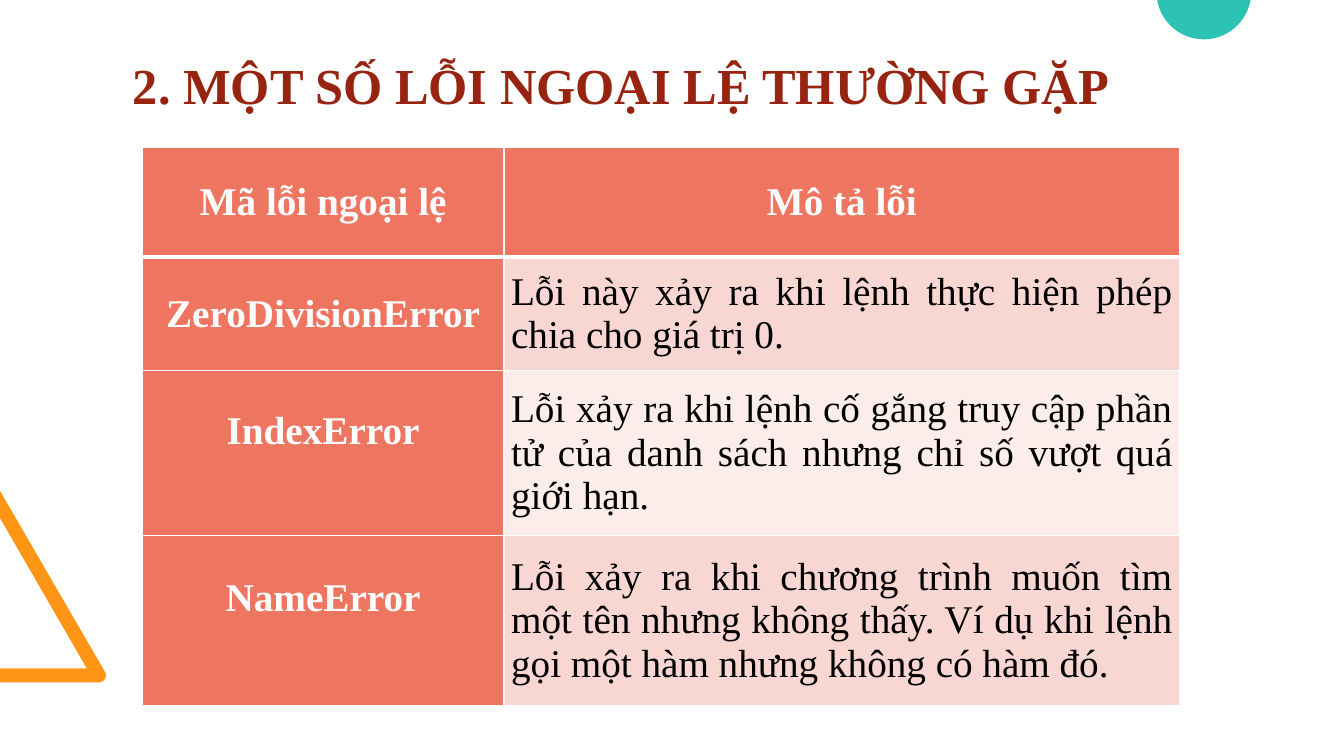
from math import cos, radians, sin

from lxml import etree
from pptx import Presentation
from pptx.dml.color import RGBColor
from pptx.enum.text import MSO_ANCHOR, MSO_AUTO_SIZE, PP_ALIGN
from pptx.oxml.ns import qn
from pptx.util import Inches, Pt

CENTER = PP_ALIGN.CENTER
JUSTIFY = PP_ALIGN.JUSTIFY
MIDDLE = MSO_ANCHOR.MIDDLE
FIT_SHAPE = MSO_AUTO_SIZE.SHAPE_TO_FIT_TEXT

WHITE = RGBColor(0xFF, 0xFF, 0xFF)
BLACK = RGBColor(0x00, 0x00, 0x00)
MAROON = RGBColor(0x97, 0x24, 0x10)
CORAL = RGBColor(0xEE, 0x76, 0x61)
PINK = RGBColor(0xF8, 0xD6, 0xD2)
PALE_PINK = RGBColor(0xFC, 0xEC, 0xEA)
ORANGE = RGBColor(0xFF, 0x95, 0x14)
TEAL = RGBColor(0x2C, 0xC3, 0xB4)

HEADER = ("Mã lỗi ngoại lệ", "Mô tả lỗi")
ERRORS = [
    ("ZeroDivisionError", "Lỗi này xảy ra khi lệnh thực hiện phép chia cho giá trị 0."),
    ("IndexError", "Lỗi xảy ra khi lệnh cố gắng truy cập phần tử của danh sách "
                   "nhưng chỉ số vượt quá giới hạn."),
    ("NameError", "Lỗi xảy ra khi chương trình muốn tìm một tên nhưng không thấy. "
                  "Ví dụ khi lệnh gọi một hàm nhưng không có hàm đó."),
]
COLUMN_WIDTHS = (3.59, 6.7)
ROW_HEIGHTS = (1.09, 1.13, 1.63, 1.69)
RAISED_ROWS = (2, 3)
LINE_HEIGHT = 0.43


def arc(center_x, center_y, radius, start, end, steps=40):
    """Return points along an arc, with angles in degrees clockwise."""
    angles = [radians(start + (end - start) * step / steps) for step in range(steps + 1)]
    return [(center_x + radius * cos(a), center_y + radius * sin(a)) for a in angles]


class SlideBuilder:
    """Draws styled elements on one slide."""

    font = "Times New Roman"

    def __init__(self, slide):
        self.slide = slide

    def outline(self, points, color):
        corners = [(Inches(x), Inches(y)) for x, y in points]
        builder = self.slide.shapes.build_freeform(*corners[0])
        builder.add_line_segments(corners[1:], close=True)
        shape = builder.convert_to_shape()
        shape.shadow.inherit = False
        shape.fill.solid()
        shape.fill.fore_color.rgb = color
        shape.line.fill.background()

    def add_text(self, text_frame, text, size, color, bold, alignment):
        paragraph = text_frame.paragraphs[0]
        paragraph.alignment = alignment
        run = paragraph.add_run()
        run.text = text
        run.font.name = self.font
        run.font.size = Pt(size)
        run.font.bold = bold
        run.font.color.rgb = color

    def title(self, text, left, top, width, height):
        box = self.slide.shapes.add_textbox(
            Inches(left), Inches(top), Inches(width), Inches(height))
        box.text_frame.word_wrap = False
        box.text_frame.auto_size = FIT_SHAPE
        self.add_text(box.text_frame, text, 36, MAROON, True, JUSTIFY)

    def borders(self, cell, top, bottom):
        properties = cell._tc.get_or_add_tcPr()
        widths = {"a:lnL": 1, "a:lnR": 1, "a:lnT": top, "a:lnB": bottom}
        for index, (tag, width) in enumerate(widths.items()):
            line = etree.Element(qn(tag), w=str(Pt(width)))
            fill = etree.SubElement(line, qn("a:solidFill"))
            etree.SubElement(fill, qn("a:srgbClr"), val=str(WHITE))
            properties.insert(index, line)

    def cell(self, cell, text, row, column):
        strong = row == 0 or column == 0
        cell.vertical_anchor = MIDDLE
        cell.margin_left = cell.margin_right = Inches(0.07)
        cell.margin_top = 0
        raised = column == 0 and row in RAISED_ROWS
        cell.margin_bottom = Inches(LINE_HEIGHT if raised else 0)
        cell.fill.solid()
        cell.fill.fore_color.rgb = CORAL if strong else PINK if row % 2 else PALE_PINK
        self.add_text(cell.text_frame, text, 28, WHITE if strong else BLACK, strong,
                      CENTER if strong else JUSTIFY)
        self.borders(cell, 3 if row == 1 else 1, 3 if row == 0 else 1)

    def table(self, rows, left, top):
        frame = self.slide.shapes.add_table(
            len(rows), len(COLUMN_WIDTHS), Inches(left), Inches(top),
            Inches(sum(COLUMN_WIDTHS)), Inches(sum(ROW_HEIGHTS)))
        table = frame.table
        table.first_row = table.horz_banding = False
        for column, width in zip(table.columns, COLUMN_WIDTHS):
            column.width = Inches(width)
        for row, height in zip(table.rows, ROW_HEIGHTS):
            row.height = Inches(height)
        for row, texts in enumerate(rows):
            for column, text in enumerate(texts):
                self.cell(table.cell(row, column), text, row, column)


def main():
    presentation = Presentation()
    presentation.slide_width = Inches(13.33)
    presentation.slide_height = Inches(7.5)
    slide = presentation.slides.add_slide(presentation.slide_layouts[6])
    builder = SlideBuilder(slide)
    rounded_corner = arc(0.98, 6.7, 0.07, -30, 90)
    builder.outline([(0, 6.77), (0, 6.63), (0.86, 6.63), (0, 5.14), (0, 4.87),
                     *rounded_corner], ORANGE)
    builder.outline(arc(11.94, -0.08, 0.47, 9.8, 170.2), TEAL)
    builder.title("2. MỘT SỐ LỖI NGOẠI LỆ THƯỜNG GẶP", 1.22, 0.49, 9.98, 0.71)
    builder.table([HEADER, *ERRORS], 1.41, 1.46)
    presentation.save("out.pptx")


if __name__ == "__main__":
    main()
